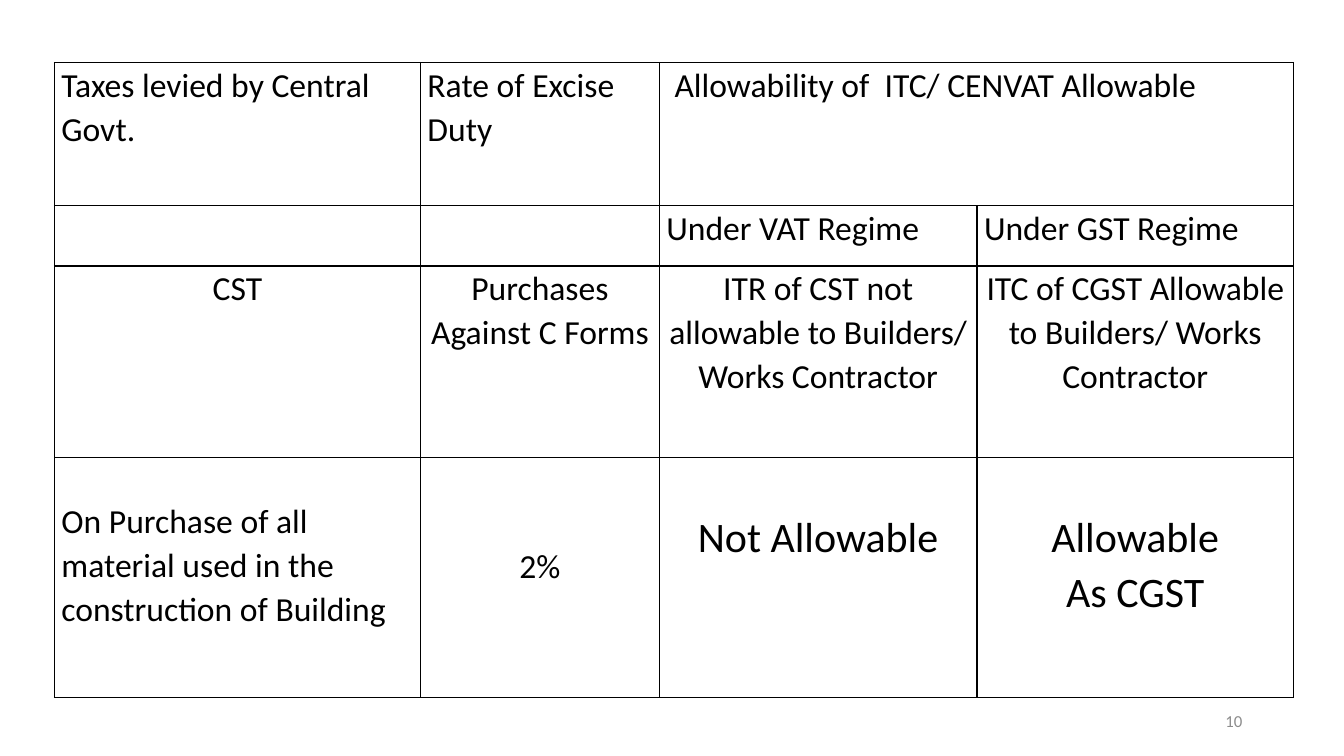
from dataclasses import dataclass

from lxml import etree
from pptx import Presentation
from pptx.dml.color import RGBColor
from pptx.enum import text
from pptx.oxml import ns
from pptx.util import Inches, Pt


@dataclass(frozen=True)
class Theme:
    font: str = "Calibri"
    ink: str = "000000"
    muted: str = "8C8C8C"
    body: int = 24
    verdict: int = 30
    footer: int = 12
    border: float = 1
    spacing: float = 1.07
    side_margin: float = 0.07


THEME = Theme()
LEFT = text.PP_ALIGN.LEFT
CENTER = text.PP_ALIGN.CENTER
RIGHT = text.PP_ALIGN.RIGHT

COLUMN_WIDTHS = (3.63, 2.37, 3.15, 3.14)
ROW_HEIGHTS = (1.42, 0.6, 1.9, 2.38)


def style_paragraph(para, size, color, align):
    para.alignment = align
    para.font.name = THEME.font
    para.font.size = Pt(size)
    para.font.color.rgb = RGBColor.from_string(color)


def add_borders(cell):
    properties = cell._tc.get_or_add_tcPr()
    for index, side in enumerate(("lnL", "lnR", "lnT", "lnB")):
        line = etree.Element(ns.qn(f"a:{side}"), w=str(Pt(THEME.border)))
        fill = etree.SubElement(line, ns.qn("a:solidFill"))
        etree.SubElement(fill, ns.qn("a:srgbClr"), val=THEME.ink)
        properties.insert(index, line)


def write_cell(cell, lines, align=LEFT, size=THEME.body, top=0, indent=0):
    cell.margin_left = Inches(THEME.side_margin + indent)
    cell.margin_right = Inches(THEME.side_margin)
    cell.margin_top = Inches(top)
    cell.margin_bottom = 0
    cell.text = lines
    for para in cell.text_frame.paragraphs:
        para.line_spacing = THEME.spacing
        style_paragraph(para, size, THEME.ink, align)


def add_tax_table(page):
    frame = page.shapes.add_table(
        len(ROW_HEIGHTS), len(COLUMN_WIDTHS), Inches(0.54), Inches(0.62),
        Inches(sum(COLUMN_WIDTHS)), Inches(sum(ROW_HEIGHTS)))
    table = frame.table
    table.first_row = False
    table.horz_banding = False
    for column, width in zip(table.columns, COLUMN_WIDTHS):
        column.width = Inches(width)
    for row, height in zip(table.rows, ROW_HEIGHTS):
        row.height = Inches(height)
    for cell in table.iter_cells():
        cell.fill.background()
        add_borders(cell)
    table.cell(0, 2).merge(table.cell(0, 3))
    return table


def fill_tax_table(table):
    write_cell(table.cell(0, 0), "Taxes levied by Central Govt.")
    write_cell(table.cell(0, 1), "Rate of Excise Duty")
    write_cell(table.cell(0, 2), "Allowability of  ITC/ CENVAT Allowable", indent=0.08)
    write_cell(table.cell(1, 2), "Under VAT Regime")
    write_cell(table.cell(1, 3), "Under GST Regime")

    purchases = (
        "CST",
        "Purchases Against C Forms",
        "ITR of CST not allowable to Builders/ Works Contractor",
        "ITC of CGST Allowable\nto Builders/ Works Contractor",
    )
    for column, lines in enumerate(purchases):
        write_cell(table.cell(2, column), lines, CENTER)

    write_cell(table.cell(3, 0),
               "On Purchase of all material used in the construction of Building",
               top=0.41)
    write_cell(table.cell(3, 1), "2%", CENTER, top=0.85)
    for column, verdict in enumerate(("Not Allowable", "Allowable\nAs CGST"), start=2):
        write_cell(table.cell(3, column), verdict, CENTER, THEME.verdict, top=0.51)


def add_page_number(page, number):
    box = page.shapes.add_textbox(Inches(9.42), Inches(6.95), Inches(3), Inches(0.4))
    frame = box.text_frame
    frame.word_wrap = True
    frame.vertical_anchor = text.MSO_ANCHOR.MIDDLE
    para = frame.paragraphs[0]
    para.text = number
    style_paragraph(para, THEME.footer, THEME.muted, RIGHT)


def main():
    deck = Presentation()
    deck.slide_width = Inches(13.33)
    deck.slide_height = Inches(7.5)
    page = deck.slides.add_slide(deck.slide_layouts[6])
    fill_tax_table(add_tax_table(page))
    add_page_number(page, "10")
    deck.save("out.pptx")


if __name__ == "__main__":
    main()
